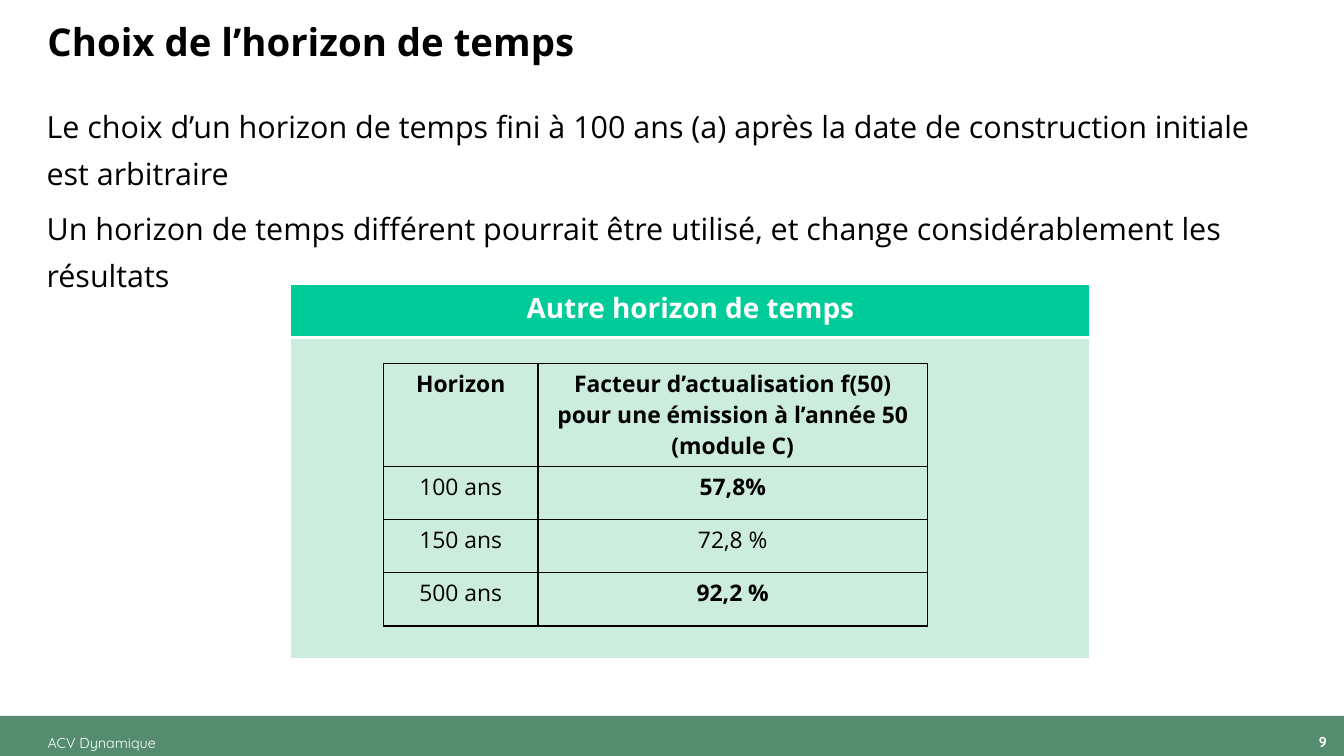
from lxml.etree import SubElement
from pptx import Presentation
from pptx.dml.color import RGBColor
from pptx.enum.shapes import MSO_SHAPE
from pptx.enum.text import PP_ALIGN
from pptx.oxml.ns import qn
from pptx.util import Pt

COLORS = {
    "white": "FFFFFF",
    "black": "000000",
    "footer": "558C70",
    "header": "00CC99",
    "panel": "CCECDE",
}


def color(name):
    return RGBColor.from_string(COLORS[name])


def write(frame, *texts, size=18, font="Open Sans", color_name="black",
          bold=False, align=PP_ALIGN.LEFT, spacing=None, before=0):
    """Fill a text frame with one paragraph per text; space only between them."""
    for index, text in enumerate(texts):
        paragraph = frame.paragraphs[0] if index == 0 else frame.add_paragraph()
        paragraph.alignment = align
        if spacing:
            paragraph.line_spacing = spacing
        if index:
            paragraph.space_before = Pt(before)
        run = paragraph.add_run()
        run.text = text
        run.font.size = Pt(size)
        run.font.name = font
        run.font.bold = bold
        run.font.color.rgb = color(color_name)


def add_text(slide, box, *texts, margins=(0, 0, 0, 0), **text_format):
    frame = slide.shapes.add_textbox(*map(Pt, box)).text_frame
    frame.word_wrap = True
    (frame.margin_left, frame.margin_top,
     frame.margin_right, frame.margin_bottom) = map(Pt, margins)
    write(frame, *texts, **text_format)


def add_footer_bar(slide):
    bar = slide.shapes.add_shape(
        MSO_SHAPE.ROUNDED_RECTANGLE, Pt(0), Pt(564.5), Pt(1058.4), Pt(31))
    bar.adjustments[0] = 0.004
    bar.shadow.inherit = False
    bar.fill.solid()
    bar.fill.fore_color.rgb = color("footer")
    bar.line.color.rgb = color("footer")
    bar.line.width = Pt(1.42)


def set_borders(cell, color_name, bottom=1):
    properties = cell._tc.get_or_add_tcPr()
    for side, width in (("L", 1), ("R", 1), ("T", 1), ("B", bottom)):
        line = SubElement(properties, qn(f"a:ln{side}"), w=str(Pt(width)))
        fill = SubElement(line, qn("a:solidFill"))
        SubElement(fill, qn("a:srgbClr"), val=COLORS[color_name])


def add_grid(slide, left, top, widths, heights):
    """Add a table without its banded style."""
    table = slide.shapes.add_table(
        len(heights), len(widths), Pt(left), Pt(top),
        Pt(sum(widths)), Pt(sum(heights))).table
    table.first_row = table.horz_banding = False
    for column, width in zip(table.columns, widths):
        column.width = Pt(width)
    for row, height in zip(table.rows, heights):
        row.height = Pt(height)
    return table


def add_panel(slide):
    table = add_grid(slide, 229, 224, [629.3], [41.8, 252.8])
    for row, (fill, bottom) in enumerate((("header", 3), ("panel", 1))):
        cell = table.cell(row, 0)
        set_borders(cell, "white", bottom)
        cell.fill.solid()
        cell.fill.fore_color.rgb = color(fill)
    write(table.cell(0, 0).text_frame, "Autre horizon de temps",
          size=22, color_name="white", bold=True, align=PP_ALIGN.CENTER)


def add_horizon_table(slide):
    rows = [
        ("Horizon", "Facteur d’actualisation f(50) pour une émission "
                    "à l’année 50 (module C)"),
        ("100 ans", "57,8%"),
        ("150 ans", "72,8 %"),
        ("500 ans", "92,2 %"),
    ]
    bold_values = ("57,8%", "92,2 %")
    table = add_grid(slide, 302, 286.5, [121.7, 306.7], [81.2] + [41.8] * 3)
    for row, texts in enumerate(rows):
        for column, text in enumerate(texts):
            cell = table.cell(row, column)
            set_borders(cell, "black")
            cell.fill.background()
            write(cell.text_frame, text, align=PP_ALIGN.CENTER,
                  bold=row == 0 or text in bold_values)


def main():
    presentation = Presentation()
    presentation.slide_width = Pt(1058.4)
    presentation.slide_height = Pt(595.44)
    slide = presentation.slides.add_slide(presentation.slide_layouts[6])

    footer = {"size": 11.3, "font": "Quicksand", "color_name": "white",
              "spacing": 1.3, "margins": (10, 4.3, 8.6, 4.3)}
    add_footer_bar(slide)
    add_text(slide, (27.4, 569.5, 552, 24.5), "ACV Dynamique", **footer)
    add_text(slide, (885.6, 568.8, 167.8, 24), "9", bold=True,
             align=PP_ALIGN.RIGHT, **footer)
    add_text(slide, (37.4, 14.4, 900, 49.7), "Choix de l’horizon de temps",
             size=30.2, bold=True)
    add_text(slide, (36.7, 76.3, 986.4, 487.4),
             "Le choix d’un horizon de temps fini à 100 ans (a) après la date "
             "de construction initiale est arbitraire",
             "Un horizon de temps différent pourrait être utilisé, et change "
             "considérablement les résultats",
             size=24, spacing=1.3, before=5.3)
    add_panel(slide)
    add_horizon_table(slide)
    presentation.save("out.pptx")


if __name__ == "__main__":
    main()
